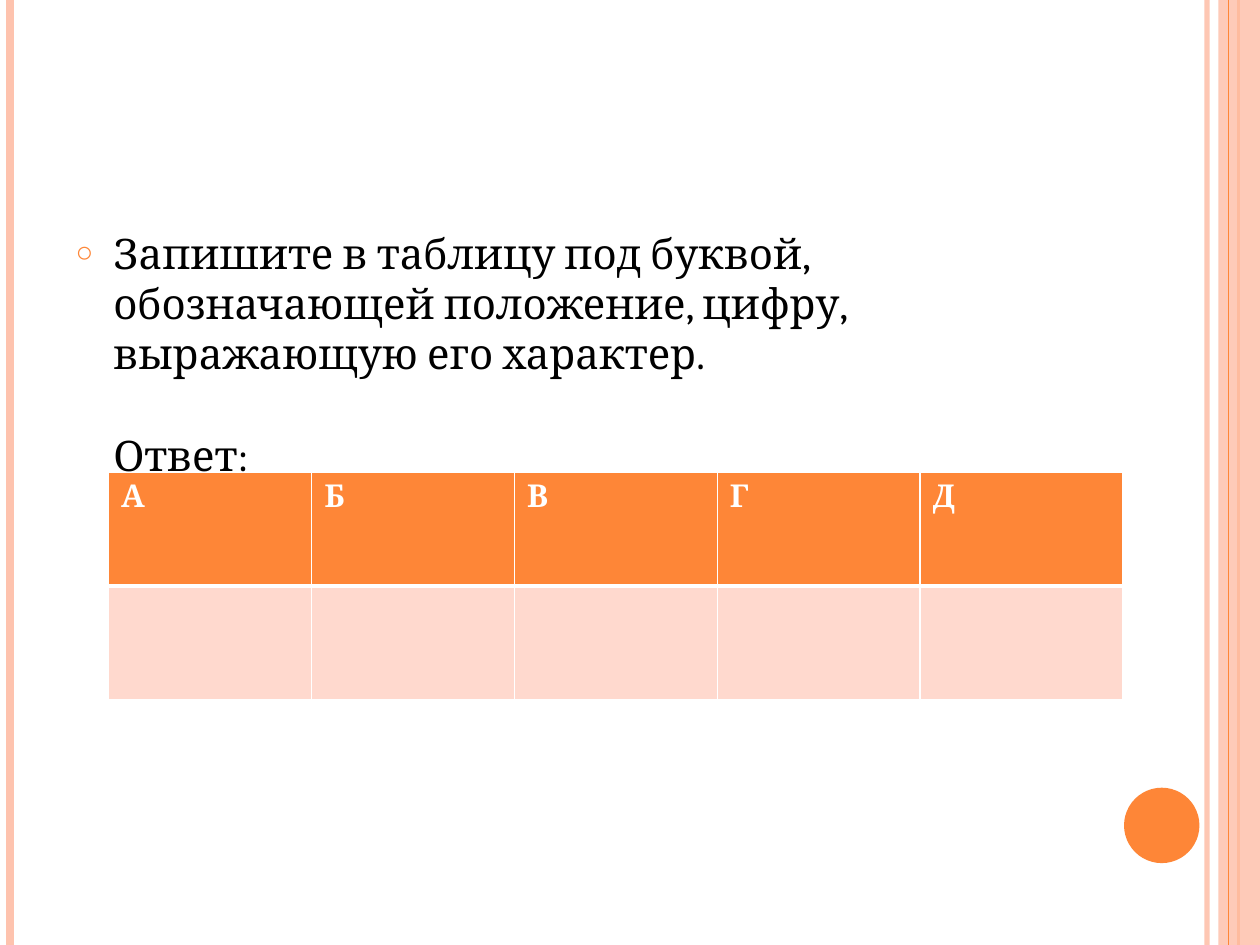
from lxml.etree import SubElement
from pptx import Presentation
from pptx.dml.color import RGBColor as RGB
from pptx.enum.shapes import MSO_CONNECTOR as CONN, MSO_SHAPE as SHAPE
from pptx.enum.text import MSO_ANCHOR as ANCHOR, MSO_AUTO_SIZE as AUTO
from pptx.oxml.ns import qn
from pptx.util import Cm, Pt

COLORS = {"orange": "FE8637", "peach": "FEC3AE", "pale": "FFD9CE",
          "white": "FFFFFF", "black": "000000"}
WIDTH, HEIGHT = 25.4, 19.05
PROMPT = ("Запишите в таблицу под буквой, обозначающей положение, "
          "цифру, выражающую его характер.")
LETTERS = "АБВГД"


def rgb(name):
    return RGB.from_string(COLORS[name])


def add(parent, tag, **attrs):
    return SubElement(parent, qn(tag), {k: str(v) for k, v in attrs.items()})


def set_alpha(sp, percent):
    for clr in sp._element.spPr.iter(qn("a:srgbClr")):
        add(clr, "a:alpha", val=percent * 1000)


class SlideBuilder:
    body_style = {"name": "Cambria", "size": Pt(24), "bold": False}
    head_style = {"name": "Cambria", "size": Pt(18), "bold": True}

    def __init__(self, prs):
        self.slide = prs.slides.add_slide(prs.slide_layouts[1])
        title = self.slide.shapes.title._element
        title.getparent().remove(title)

    def format(self, r, style, color):
        for key, value in style.items():
            setattr(r.font, key, value)
        r.font.color.rgb = rgb(color)

    def stripe(self, x, color, weight, alpha=100):
        ln = self.slide.shapes.add_connector(
            CONN.STRAIGHT, Cm(x), 0, Cm(x), Cm(HEIGHT))
        ln.line.color.rgb = rgb(color)
        ln.line.width = Pt(weight)
        add(ln._element.spPr, "a:effectLst")
        if alpha < 100:
            set_alpha(ln, alpha)

    def shape(self, kind, x, y, w, h, color, alpha=100):
        sp = self.slide.shapes.add_shape(kind, Cm(x), Cm(y), Cm(w), Cm(h))
        sp.shadow.inherit = False
        sp.fill.solid()
        sp.fill.fore_color.rgb = rgb(color)
        sp.line.fill.background()
        if alpha < 100:
            set_alpha(sp, alpha)

    def body(self, x, y, w, h, items):
        sp = self.slide.placeholders[1]
        sp.left, sp.top, sp.width, sp.height = Cm(x), Cm(y), Cm(w), Cm(h)
        tf = sp.text_frame
        tf.word_wrap = True
        tf.auto_size = AUTO.NONE
        tf.vertical_anchor = ANCHOR.TOP
        for i, (text, bullet, before) in enumerate(items):
            p = tf.add_paragraph() if i else tf.paragraphs[0]
            pPr = p._p.get_or_add_pPr()
            pPr.set("marL", str(Cm(0.76)))
            pPr.set("indent", str(-Cm(0.76) if bullet else 0))
            if bullet:
                add(add(pPr, "a:buClr"), "a:srgbClr", val=COLORS["orange"])
                add(pPr, "a:buSzPct", val=70000)
                add(pPr, "a:buChar", char=bullet)
            else:
                add(pPr, "a:buNone")
            p.space_before = Pt(before)
            r = p.add_run()
            r.text = text
            self.format(r, self.body_style, "black")
        self.slide.shapes._spTree.append(sp._element)

    def cell(self, cell, color, top, bottom):
        tcPr = cell._tc.get_or_add_tcPr()
        for side, weight in zip("LRTB", (1, 1, top, bottom)):
            ln = add(tcPr, f"a:ln{side}", w=Pt(weight))
            add(add(ln, "a:solidFill"), "a:srgbClr", val=COLORS["white"])
        cell.fill.solid()
        cell.fill.fore_color.rgb = rgb(color)

    def answer_table(self, x, y, w, h, letters):
        table = self.slide.shapes.add_table(
            2, len(letters), Cm(x), Cm(y), Cm(w), Cm(h)).table
        table.horz_banding = False
        for col, letter in enumerate(letters):
            head = table.cell(0, col)
            self.cell(head, "orange", 1, 3)
            self.cell(table.cell(1, col), "pale", 3, 1)
            r = head.text_frame.paragraphs[0].add_run()
            r.text = letter
            self.format(r, self.head_style, "white")


def main():
    prs = Presentation()
    prs.slide_width, prs.slide_height = Cm(WIDTH), Cm(HEIGHT)
    s = SlideBuilder(prs)
    s.stripe(24.33, "peach", 3, 93)
    s.stripe(0.21, "peach", 4.5)
    s.stripe(24.97, "orange", 1.5)
    s.shape(SHAPE.RECTANGLE, 24.56, 0, WIDTH - 24.56, HEIGHT, "peach", 87)
    s.stripe(24.77, "orange", 0.75)
    s.shape(SHAPE.OVAL, 22.66, 15.88, 1.52, 1.52, "orange")
    s.body(1.27, 4.45, 20.75, 13.54,
           [(PROMPT, "○", 6), ("Ответ:", None, 29)])
    s.answer_table(2.19, 9.53, 20.45, 4.57, LETTERS)
    prs.save("out.pptx")


if __name__ == "__main__":
    main()
